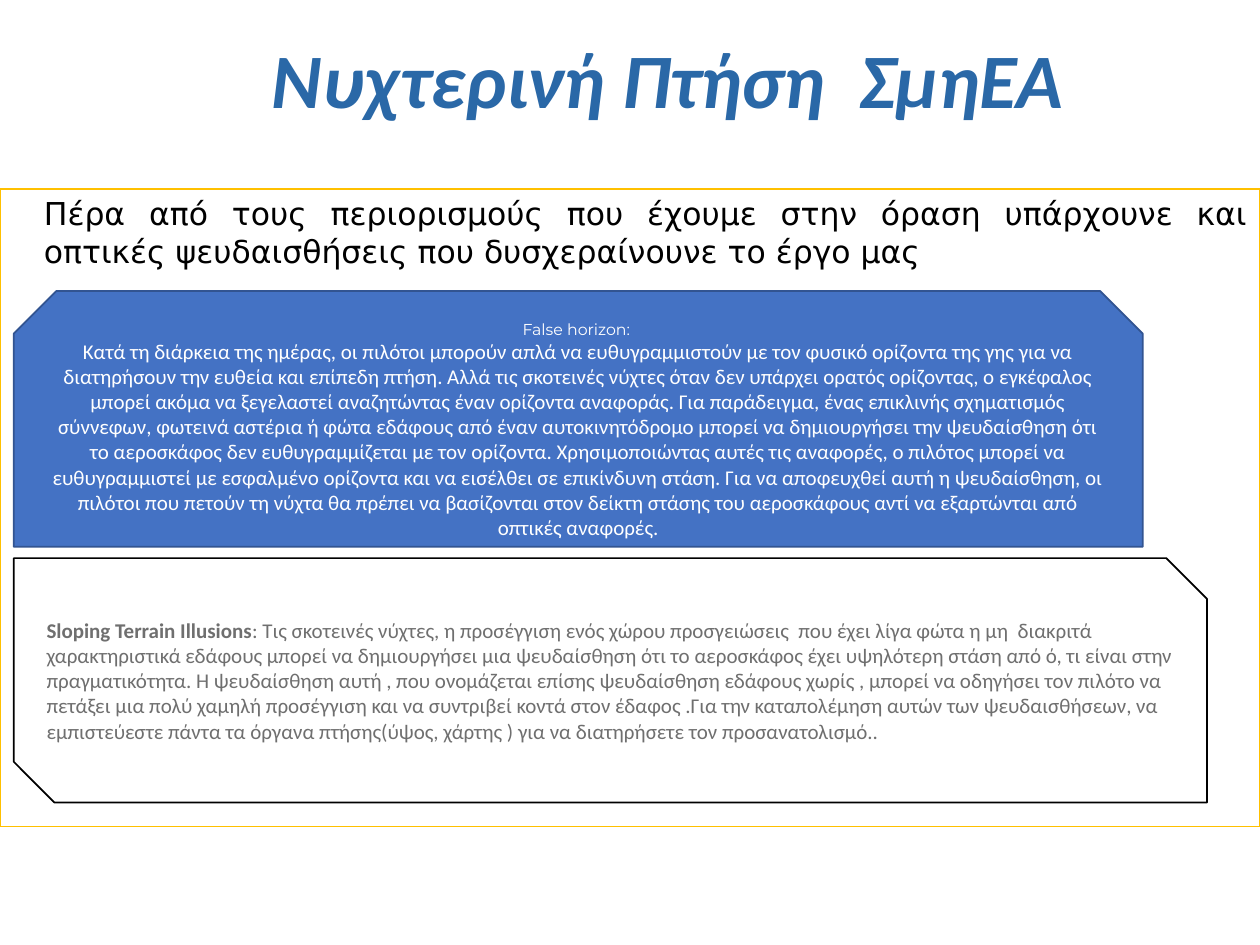
from dataclasses import dataclass

from pptx import Presentation
from pptx.dml.color import RGBColor
from pptx.enum.shapes import MSO_SHAPE
from pptx.enum.text import MSO_ANCHOR, PP_ALIGN
from pptx.util import Inches, Pt

RECTANGLE = MSO_SHAPE.RECTANGLE
SNIP_TOP = MSO_SHAPE.SNIP_2_SAME_RECTANGLE
SNIP_DIAGONAL = MSO_SHAPE.SNIP_2_DIAG_RECTANGLE
TOP, MIDDLE = MSO_ANCHOR.TOP, MSO_ANCHOR.MIDDLE
LEFT, CENTER, JUSTIFY = PP_ALIGN.LEFT, PP_ALIGN.CENTER, PP_ALIGN.JUSTIFY


@dataclass(frozen=True)
class Theme:
    title: str = "2A68A7"
    black: str = "000000"
    white: str = "FFFFFF"
    gray: str = "6F6F6F"
    blue: str = "4472C4"
    blue_edge: str = "325491"
    gold: str = "FFC000"
    main_font: str = "Calibri"
    intro_font: str = "DejaVu Sans"
    label_font: str = "Montserrat"
    title_size: int = 44
    intro_size: int = 18
    body_size: int = 12
    label_size: int = 9


class SlideBuilder:
    def __init__(self, slide, theme):
        self.slide = slide
        self.theme = theme

    def panel(self, preset, left, top, width, height, fill, line):
        shape = self.slide.shapes.add_shape(
            preset, Inches(left), Inches(top), Inches(width), Inches(height))
        shape.shadow.inherit = False
        shape.fill.solid()
        shape.fill.fore_color.rgb = RGBColor.from_string(fill)
        shape.line.color.rgb = RGBColor.from_string(line)
        shape.line.width = Pt(1)
        return shape.text_frame

    def text_box(self, left, top, width, height):
        box = self.slide.shapes.add_textbox(
            Inches(left), Inches(top), Inches(width), Inches(height))
        return box.text_frame

    def fill_text(self, frame, paragraphs, color, anchor=MIDDLE, align=LEFT):
        """Each paragraph is (font, size, spans); a span is (text, bold)."""
        frame.word_wrap = True
        frame.vertical_anchor = anchor
        for index, (font, size, spans) in enumerate(paragraphs):
            para = frame.add_paragraph() if index else frame.paragraphs[0]
            para.alignment = align
            para.font.name = font
            para.font.size = Pt(size)
            para.font.color.rgb = RGBColor.from_string(color)
            for text, bold in spans:
                span = para.add_run()
                span.text = text
                span.font.bold = bold
        return frame.paragraphs[0]


TITLE = "Νυχτερινή Πτήση  ΣμηΕΑ"
INTRO = ("Πέρα από τους περιορισμούς που έχουμε στην όραση υπάρχουνε και "
         "οπτικές ψευδαισθήσεις που δυσχεραίνουνε το έργο μας")
HORIZON_LABEL = "False horizon: "
HORIZON = (
    "Κατά τη διάρκεια της ημέρας, οι πιλότοι μπορούν απλά να ευθυγραμμιστούν "
    "με τον φυσικό ορίζοντα της γης για να διατηρήσουν την ευθεία και επίπεδη "
    "πτήση. Αλλά τις σκοτεινές νύχτες όταν δεν υπάρχει ορατός ορίζοντας, ο "
    "εγκέφαλος μπορεί ακόμα να ξεγελαστεί αναζητώντας έναν ορίζοντα αναφοράς. "
    "Για παράδειγμα, ένας επικλινής σχηματισμός σύννεφων, φωτεινά αστέρια ή "
    "φώτα εδάφους από έναν αυτοκινητόδρομο μπορεί να δημιουργήσει την "
    "ψευδαίσθηση ότι το αεροσκάφος δεν ευθυγραμμίζεται με τον ορίζοντα. "
    "Χρησιμοποιώντας αυτές τις αναφορές, ο πιλότος μπορεί να ευθυγραμμιστεί "
    "με εσφαλμένο ορίζοντα και να εισέλθει σε επικίνδυνη στάση. Για να "
    "αποφευχθεί αυτή η ψευδαίσθηση, οι πιλότοι που πετούν τη νύχτα θα πρέπει "
    "να βασίζονται στον δείκτη στάσης του αεροσκάφους αντί να εξαρτώνται από "
    "οπτικές αναφορές.")
TERRAIN_LABEL = "Sloping Terrain Illusions"
TERRAIN = (
    ": Τις σκοτεινές νύχτες, η προσέγγιση ενός χώρου προσγειώσεις  που έχει "
    "λίγα φώτα η μη  διακριτά χαρακτηριστικά εδάφους μπορεί να δημιουργήσει "
    "μια ψευδαίσθηση ότι το αεροσκάφος έχει υψηλότερη στάση από ό, τι είναι "
    "στην πραγματικότητα. Η ψευδαίσθηση αυτή , που ονομάζεται επίσης "
    "ψευδαίσθηση εδάφους χωρίς , μπορεί να οδηγήσει τον πιλότο να πετάξει μια "
    "πολύ χαμηλή προσέγγιση και να συντριβεί κοντά στον έδαφος .Για την "
    "καταπολέμηση αυτών των ψευδαισθήσεων, να εμπιστεύεστε πάντα τα όργανα "
    "πτήσης(ύψος, χάρτης ) για να διατηρήσετε τον προσανατολισμό..")


def main():
    deck = Presentation()
    deck.slide_width, deck.slide_height = Inches(10), Inches(7.5)
    theme = Theme()
    page = SlideBuilder(deck.slides.add_slide(deck.slide_layouts[6]), theme)

    # Title
    title = page.fill_text(
        page.text_box(2.06, 0.16, 7.78, 1),
        [(theme.main_font, theme.title_size, [(TITLE, True)])], theme.title)
    title.font.italic = True
    title.line_spacing = 0.9

    # Framed content area and introduction
    page.panel(RECTANGLE, 0, 1.5, 10, 5.06, theme.white, theme.gold)
    intro = page.fill_text(
        page.text_box(0, 1.49, 10, 0.86),
        [(theme.intro_font, theme.intro_size, [(INTRO, None)])],
        theme.black, TOP, JUSTIFY)
    intro._p.get_or_add_pPr().set("marL", str(Inches(0.25)))

    # False horizon panel
    page.fill_text(
        page.panel(SNIP_TOP, 0.11, 2.31, 8.96, 2.03, theme.blue, theme.blue_edge),
        [(theme.label_font, theme.label_size, [(HORIZON_LABEL, None)]),
         (theme.main_font, theme.body_size, [(HORIZON, None)])],
        theme.white, align=CENTER)

    # Sloping terrain panel
    page.fill_text(
        page.panel(SNIP_DIAGONAL, 0.11, 4.43, 9.47, 1.94, theme.white, theme.black),
        [(theme.main_font, theme.body_size,
          [(TERRAIN_LABEL, True), (TERRAIN, None)])],
        theme.gray)

    deck.save("out.pptx")


if __name__ == "__main__":
    main()
